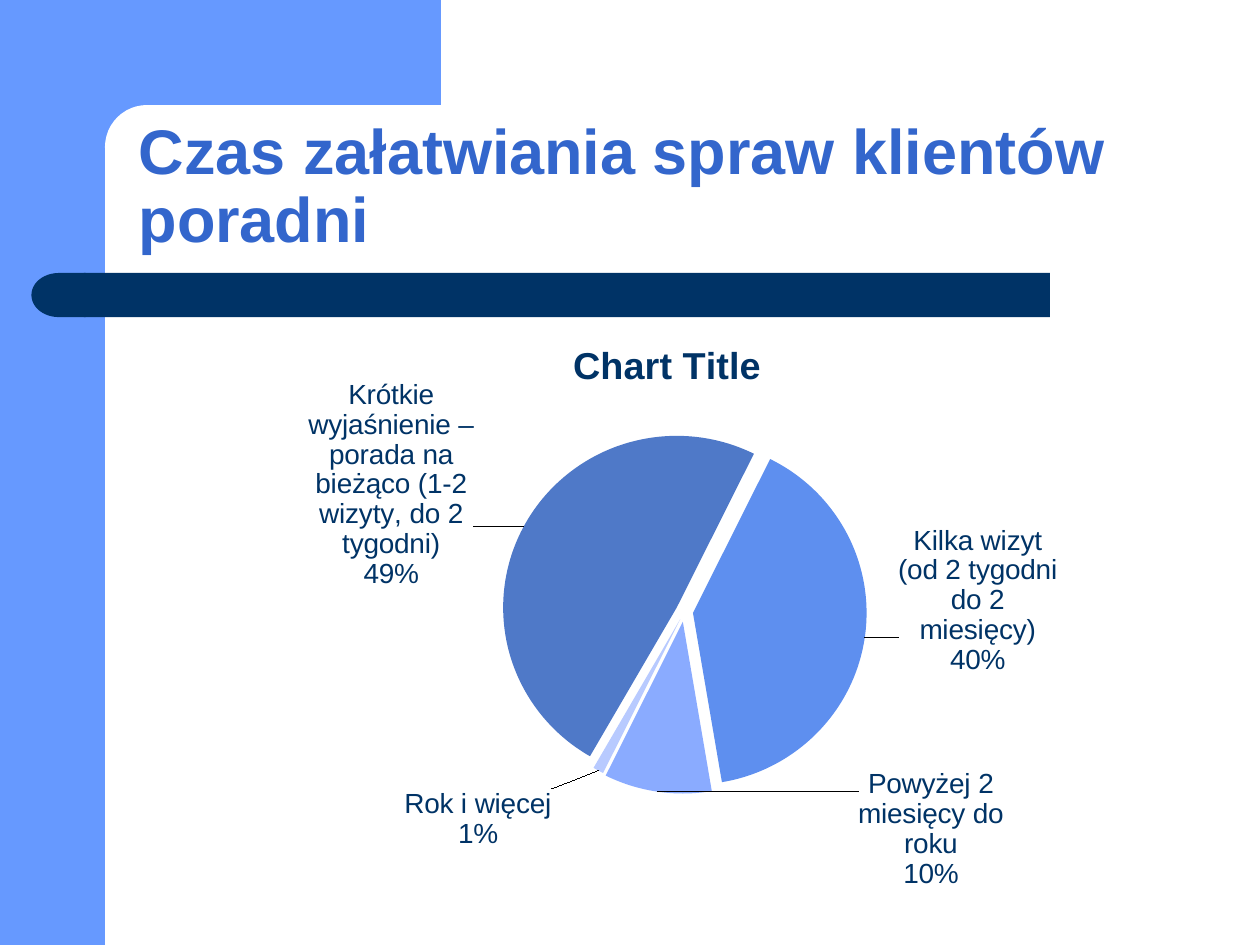
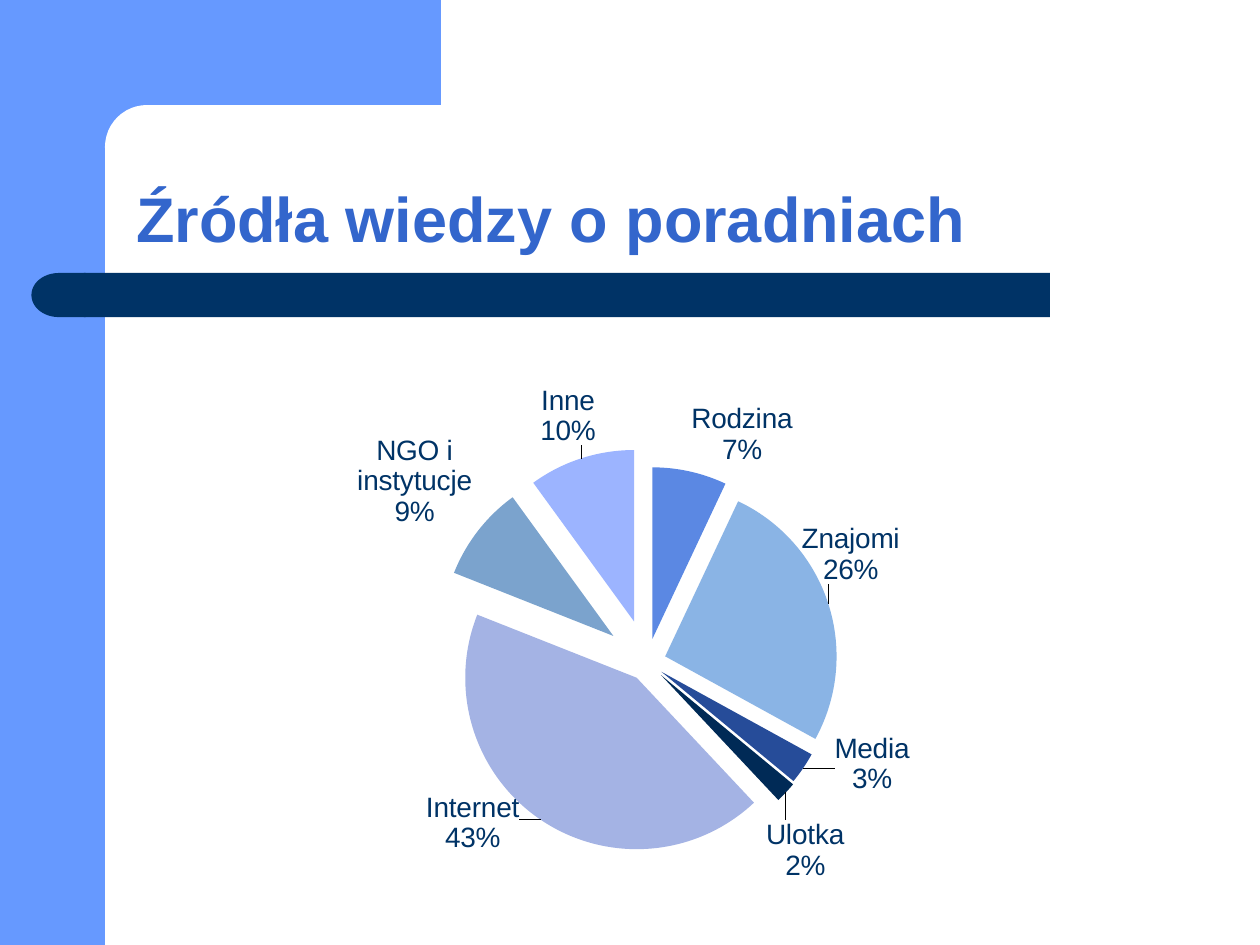
from lxml import etree
from pptx import Presentation
from pptx import util as u
from pptx.chart.data import CategoryChartData
from pptx.dml.color import RGBColor
from pptx.enum import chart as charts, shapes, text
from pptx.oxml import ns

COLORS = {"sky": "6699FF", "navy": "003366", "title": "3366CC", "white": "FFFFFF"}
FONT = "Arial"
LABEL_SIZE = 16
RESERVED_EXPLOSION = 25

# Preset, left, top, width, height, colour, corner radius, mirrored
BANDS = [
    (shapes.MSO_SHAPE.RECTANGLE, 0, 0, 60, 540, "sky", None, False),
    (shapes.MSO_SHAPE.RECTANGLE, 54, 0, 198, 84, "sky", None, False),
    (shapes.MSO_SHAPE.ROUNDED_RECTANGLE, 60, 60, 402, 48, "white", 0.5, False),
    (shapes.MSO_SHAPE.ROUNDED_RECTANGLE, 48, 156, 552, 25.2, "navy", 0, False),
    (shapes.MSO_SHAPE.FLOWCHART_DELAY, 18, 156, 31, 25.2, "navy", None, True),
]

# Each slice: category, value, colour, explosion, label offset as a share of the chart
SLIDES = [
    {
        "title": "Czas załatwiania spraw klientów poradni",
        "title_left": 72,
        "chart_title": "Chart Title",
        "frame": (133.2, 179.3, 496, 345.6),
        "plot": (0.27, 0.11, 0.5, 0.77),
        "start": 210,
        "slices": [
            ("Krótkie wyjaśnienie – porada na bieżąco (1-2 wizyty, do 2 tygodni)",
             49, "4F79C8", 5, (-0.05, 0.11)),
            ("Kilka wizyt (od 2 tygodni do 2 miesięcy)", 40, "5E8FEF", 5, (0.03, -0.19)),
            ("Powyżej 2 miesięcy do roku", 10, "8AABFF", 6, (0.4, -0.05)),
            ("Rok i więcej", 1, "B8CAFF", 5, (-0.05, 0.02)),
        ],
    },
    {
        "title": "Źródła wiedzy o poradniach",
        "title_left": 70.6,
        "chart_title": None,
        "frame": (127.4, 207.4, 480.2, 319.7),
        "plot": (0.25, 0.15, 0.51, 0.77),
        "start": 0,
        "slices": [
            ("Rodzina", 7, "5B88E3", 14, None),
            ("Znajomi", 26, "8AB4E5", 11, (-0.04, -0.03)),
            ("Media", 3, "264C99", 10, (0.03, -0.07)),
            ("Ulotka", 2, "002A56", 11, (-0.03, 0.04)),
            ("Internet", 43, "A4B3E4", 11, (-0.02, -0.06)),
            ("NGO i instytucje", 9, "7BA3CD", 25, None),
            ("Inne", 10, "9CB4FF", 25, (0.02, -0.01)),
        ],
    },
]


def chart_element(tag, value=None, **children):
    """Make a chart XML element; a layout gets its numbers as children of manualLayout."""
    element = etree.Element(ns.qn("c:" + tag))
    if value is not None:
        element.set("val", str(value))
    if children:
        manual = etree.SubElement(element, ns.qn("c:manualLayout"))
        for name, number in children.items():
            etree.SubElement(manual, ns.qn("c:" + name)).set("val", str(number))
    return element


def style_font(font, size, color, bold=False):
    font.name = FONT
    font.size = u.Pt(size)
    font.bold = bold
    font.color.rgb = RGBColor.from_string(COLORS[color])


presentation = Presentation()
presentation.slide_width, presentation.slide_height = u.Pt(720), u.Pt(540)

for content in SLIDES:
    slide = presentation.slides.add_slide(presentation.slide_layouts[5])

    for preset, left, top, width, height, color, radius, mirrored in BANDS:
        band = slide.shapes.add_shape(preset, u.Pt(left), u.Pt(top), u.Pt(width), u.Pt(height))
        band.shadow.inherit = False
        band.fill.solid()
        band.fill.fore_color.rgb = RGBColor.from_string(COLORS[color])
        band.line.fill.background()
        if radius is not None:
            band.adjustments[0] = radius
        if mirrored:
            band.element.spPr.find(ns.qn("a:xfrm")).set("flipH", "1")

    # The title sits above the bands
    title = slide.shapes.title
    title.element.getparent().append(title.element)
    title.left, title.top = u.Pt(content["title_left"]), u.Pt(60)
    title.width, title.height = u.Pt(702 - content["title_left"]), u.Pt(90)
    title.text_frame.auto_size = text.MSO_AUTO_SIZE.NONE
    title.text_frame.word_wrap = True
    title.text_frame.vertical_anchor = text.MSO_ANCHOR.BOTTOM
    paragraph = title.text_frame.paragraphs[0]
    paragraph.alignment = text.PP_ALIGN.LEFT
    paragraph.line_spacing = 0.9
    run = paragraph.add_run()
    run.text = content["title"]
    style_font(run.font, 36, "title", bold=True)

    # Pie chart
    slices = content["slices"]
    data = CategoryChartData()
    data.categories = [row[0] for row in slices]
    data.add_series("Series 1", [row[1] for row in slices])
    frame = [u.Pt(length) for length in content["frame"]]
    chart = slide.shapes.add_chart(charts.XL_CHART_TYPE.PIE, *frame, data).chart
    style_font(chart.font, 18, "navy")
    chart.has_legend = False
    chart.has_title = content["chart_title"] is not None
    if chart.has_title:
        run = chart.chart_title.text_frame.paragraphs[0].add_run()
        run.text = content["chart_title"]
        style_font(run.font, 21.6, "navy", bold=True)
        chart.chart_title.include_in_layout = False

    plot = chart.plots[0]
    plot.vary_by_categories = True
    series = plot.series[0]
    pie = series._element.getparent()
    for old in pie.findall(ns.qn("c:firstSliceAng")):
        pie.remove(old)
    pie.append(chart_element("firstSliceAng", content["start"]))
    plot_area = pie.getparent()
    for old in plot_area.findall(ns.qn("c:layout")):
        plot_area.remove(old)
    x, y, w, h = content["plot"]
    plot_area.insert(0, chart_element("layout", layoutTarget="inner", xMode="edge",
                                      yMode="edge", x=x, y=y, w=w, h=h))
    series._element.find(ns.qn("c:tx")).addnext(chart_element("explosion", RESERVED_EXPLOSION))

    labels = series.data_labels
    labels.number_format = "0%"
    labels.number_format_is_linked = False
    labels.position = charts.XL_LABEL_POSITION.OUTSIDE_END
    style_font(labels.font, LABEL_SIZE, "navy")

    for index, (category, value, color, explosion, offset) in enumerate(slices):
        point = series.points[index]
        point.format.fill.solid()
        point.format.fill.fore_color.rgb = RGBColor.from_string(color)
        point.format.line.fill.background()
        data_point = series._element.findall(ns.qn("c:dPt"))[index]
        data_point.find(ns.qn("c:spPr")).addprevious(chart_element("explosion", explosion))
        if offset:
            label = point.data_label
            label.position = charts.XL_LABEL_POSITION.OUTSIDE_END
            style_font(label.font, LABEL_SIZE, "navy")
            label_element = series._element.findall(".//" + ns.qn("c:dLbl"))[-1]
            label_element.find(ns.qn("c:idx")).addnext(
                chart_element("layout", x=offset[0], y=offset[1]))

    # Every label shows its category above its share
    all_labels = series._element.find(ns.qn("c:dLbls"))
    for element in [all_labels, *all_labels.findall(ns.qn("c:dLbl"))]:
        for tag, shown in (("showVal", 0), ("showCatName", 1), ("showPercent", 1)):
            element.find(ns.qn("c:" + tag)).set("val", str(shown))
        separator = chart_element("separator")
        separator.text = "\n"
        element.find(ns.qn("c:showBubbleSize")).addnext(separator)

presentation.save("out.pptx")
